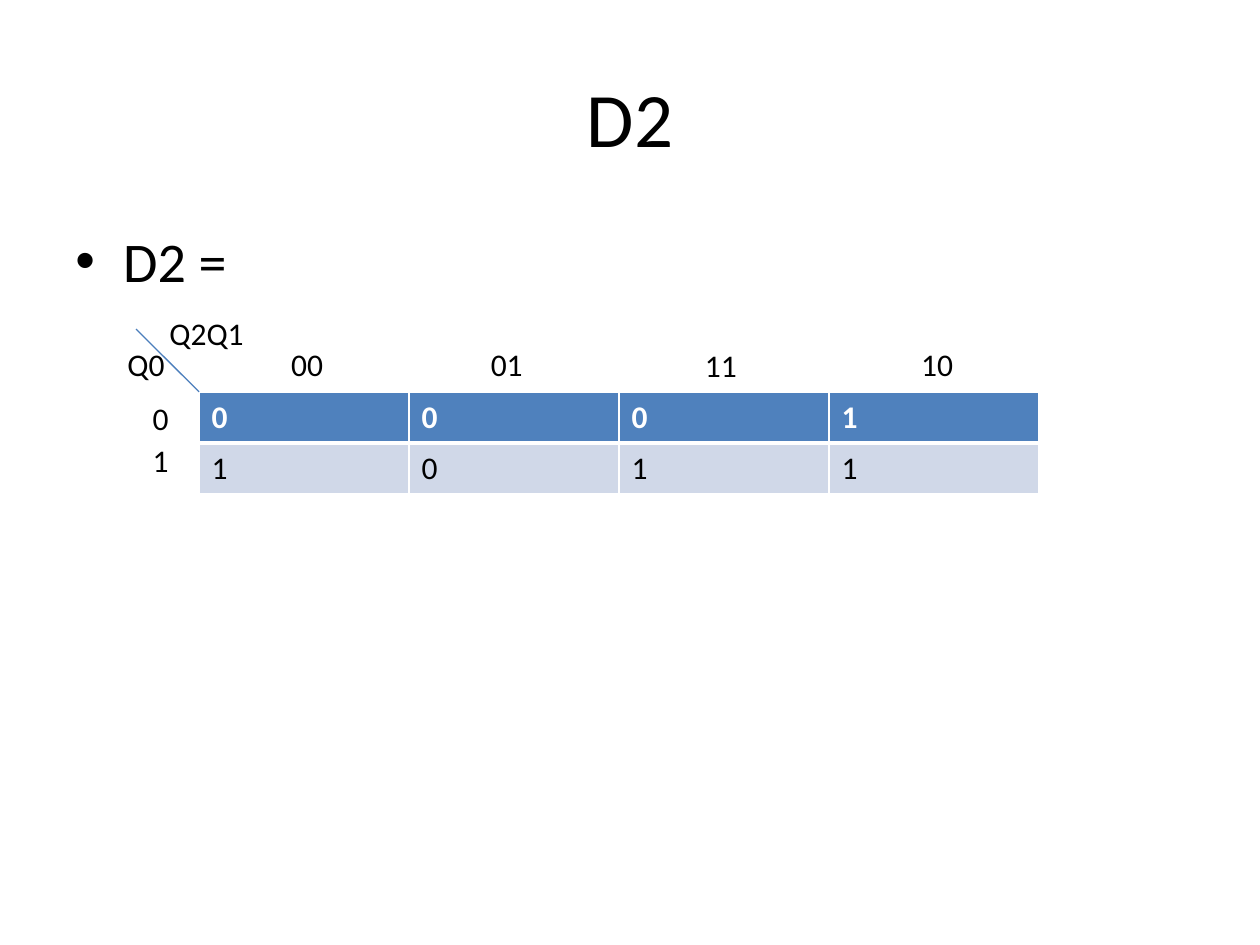
from dataclasses import dataclass

from lxml import etree
from pptx import Presentation
from pptx.dml.color import RGBColor
from pptx.enum.shapes import MSO_CONNECTOR
from pptx.enum.text import MSO_ANCHOR, MSO_AUTO_SIZE, PP_ALIGN
from pptx.oxml.ns import qn
from pptx.util import Inches, Pt

STRAIGHT = MSO_CONNECTOR.STRAIGHT
MIDDLE, TOP = MSO_ANCHOR.MIDDLE, MSO_ANCHOR.TOP
CENTER, LEFT = PP_ALIGN.CENTER, PP_ALIGN.LEFT
FIT_SHAPE, NO_FIT = MSO_AUTO_SIZE.SHAPE_TO_FIT_TEXT, MSO_AUTO_SIZE.NONE

FONT = "Calibri"
COLORS = {
    "text": "000000",
    "header_text": "FFFFFF",
    "header": "4F81BD",
    "body": "D0D8E8",
    "border": "FFFFFF",
    "diagonal": "4B7EBC",
}
SLIDE_WIDTH, SLIDE_HEIGHT = 10, 7.5
MARGIN = 0.05 * SLIDE_WIDTH
MAP_LEFT, MAP_TOP = 1.58, 3.11
COLUMN, ROW = SLIDE_WIDTH / 6, 0.405
MAP_VALUES = (("0", "0", "0", "1"), ("1", "0", "1", "1"))


@dataclass(frozen=True)
class Label:
    """Text placed in columns and rows from the map's top left corner."""
    text: str
    column: float
    row: float
    width: float


LABELS = (
    Label("00", 0.38, -1.04, 0.46),
    Label("01", 1.33, -1.04, 0.46),
    Label("11", 2.35, -1.01, 0.46),
    Label("10", 3.38, -1.04, 0.46),
    Label("0", -0.28, 0.02, 0.33),
    Label("1", -0.28, 0.84, 0.33),
    Label("Q2Q1", -0.2, -1.65, 0.8),
    Label("Q0", -0.4, -1.04, 0.5),
)


def map_x(column: float) -> int:
    return Inches(MAP_LEFT + column * COLUMN)


def map_y(row: float) -> int:
    return Inches(MAP_TOP + row * ROW)


def add_run(paragraph, text: str, size: float, color: str = "text", bold: bool = False) -> None:
    run = paragraph.add_run()
    run.text = text
    run.font.name = FONT
    run.font.size = Pt(size)
    run.font.bold = bold
    run.font.color.rgb = RGBColor.from_string(COLORS[color])


def add_text(slide, box: tuple, text: str, size: float, wrap: bool = True,
             anchor=TOP, alignment=LEFT):
    """Add a one-paragraph text box and return the paragraph."""
    frame = slide.shapes.add_textbox(*box).text_frame
    frame.word_wrap = wrap
    frame.auto_size = NO_FIT if wrap else FIT_SHAPE
    frame.vertical_anchor = anchor
    paragraph = frame.paragraphs[0]
    paragraph.alignment = alignment
    add_run(paragraph, text, size)
    return paragraph


def add_bullet(paragraph, indent: float) -> None:
    properties = paragraph._p.get_or_add_pPr()
    properties.set("marL", str(Inches(indent)))
    properties.set("indent", str(-Inches(indent)))
    etree.SubElement(properties, qn("a:buFont"), typeface="Arial")
    etree.SubElement(properties, qn("a:buChar"), char="•")


def set_borders(cell, widths: dict) -> None:
    properties = cell._tc.get_or_add_tcPr()
    for position, (side, width) in enumerate(widths.items()):
        line = etree.Element(qn(f"a:{side}"), w=str(Pt(width)))
        fill = etree.SubElement(line, qn("a:solidFill"))
        etree.SubElement(fill, qn("a:srgbClr"), val=COLORS["border"])
        properties.insert(position, line)


def add_map(slide) -> None:
    row_count, column_count = len(MAP_VALUES), len(MAP_VALUES[0])
    table = slide.shapes.add_table(
        row_count, column_count, map_x(0), map_y(0),
        Inches(column_count * COLUMN), Inches(row_count * ROW)).table
    for row, values in enumerate(MAP_VALUES):
        is_header = row == 0
        for column, value in enumerate(values):
            cell = table.cell(row, column)
            cell.fill.solid()
            cell.fill.fore_color.rgb = RGBColor.from_string(
                COLORS["header" if is_header else "body"])
            add_run(cell.text_frame.paragraphs[0], value, 18,
                    "header_text" if is_header else "text", is_header)
            set_borders(cell, {"lnL": 1, "lnR": 1,
                               "lnT": 1 if is_header else 3,
                               "lnB": 3 if is_header else 1})


def add_diagonal(slide) -> None:
    line = slide.shapes.add_connector(
        STRAIGHT, map_x(-0.3), map_y(-1.23), map_x(0), map_y(0))
    line.line.color.rgb = RGBColor.from_string(COLORS["diagonal"])
    line.line.width = Pt(0.75)
    etree.SubElement(line._element.spPr, qn("a:effectLst"))


def main() -> None:
    presentation = Presentation()
    presentation.slide_width = Inches(SLIDE_WIDTH)
    presentation.slide_height = Inches(SLIDE_HEIGHT)
    slide = presentation.slides.add_slide(presentation.slide_layouts[6])

    content_width = Inches(SLIDE_WIDTH - 2 * MARGIN)
    title_box = (Inches(MARGIN), Inches(0.04 * SLIDE_HEIGHT),
                 content_width, Inches(SLIDE_HEIGHT / 6))
    add_text(slide, title_box, "D2", 44, anchor=MIDDLE, alignment=CENTER)
    body_box = (Inches(MARGIN), Inches(1.75), content_width,
                Inches(0.66 * SLIDE_HEIGHT))
    equation = add_text(slide, body_box, "D2 =", 32)
    equation.space_before = Pt(0.2 * 32)
    add_bullet(equation, 0.38)

    add_map(slide)
    add_diagonal(slide)
    for label in LABELS:
        box = (map_x(label.column), map_y(label.row), Inches(label.width), Inches(0.4))
        add_text(slide, box, label.text, 18, wrap=False)

    presentation.save("out.pptx")


if __name__ == "__main__":
    main()
